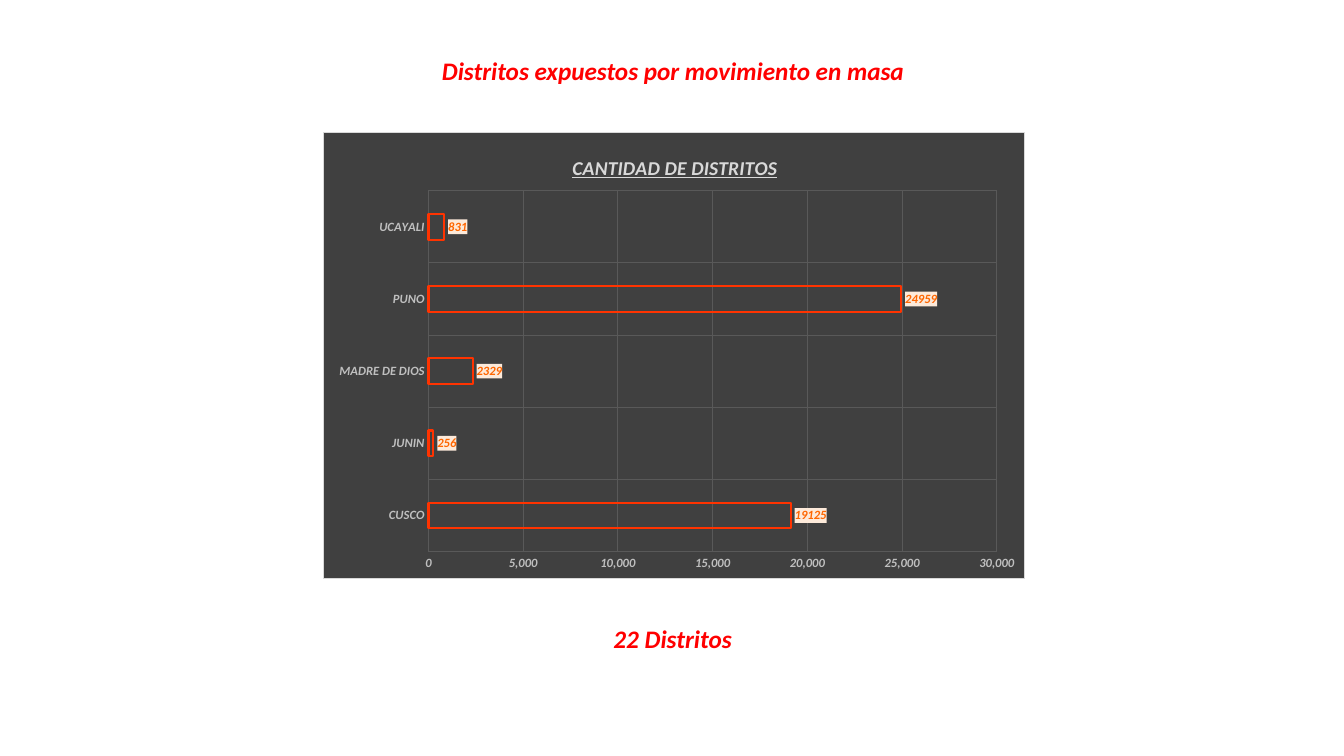
import pptx
import pptx.util
import pptx.chart.data
import pptx.dml.color
import pptx.enum.chart
import pptx.enum.text
import pptx.oxml
import pptx.oxml.ns

Pt = pptx.util.Pt
enum = pptx.enum.chart
hues = {"red": "FF0000", "dark": "404040", "edge": "D9D9D9", "grid": "595959",
        "tick": "BFBFBF", "bar": "FF3300", "value": "FF6600", "tag": "FDEADA"}
space = pptx.oxml.ns.nsdecls("c", "a")


def style(font, size, hue, **more):
    form = {"name": "Calibri", "size": Pt(size), "bold": True, "italic": True, **more}
    for key, value in form.items():
        setattr(font, key, value)
    font.color.rgb = pptx.dml.color.RGBColor.from_string(hues[hue])


def place(node, **spots):
    layout = node.find(pptx.oxml.ns.qn("c:layout"))
    if layout is not None:
        node.remove(layout)
    marks = "".join(f'<c:{key} val="{value}"/>' for key, value in spots.items())
    layout = pptx.oxml.parse_xml(
        f"<c:layout {space}><c:manualLayout>{marks}</c:manualLayout></c:layout>")
    # A title keeps its text before the layout
    node.insert(1 if node.tag.endswith("}title") else 0, layout)


deck = pptx.Presentation()
deck.slide_width, deck.slide_height = Pt(960), Pt(540)
slide = deck.slides.add_slide(deck.slide_layouts[5])

# Heading and total
head = slide.shapes.title
head.left, head.top, head.width, head.height = Pt(306.5), Pt(36), Pt(348.5), Pt(29)
total = slide.shapes.add_textbox(Pt(420.5), Pt(441.5), Pt(120), Pt(29))
for box, text, wrap in ((head, "Distritos expuestos por movimiento en masa", False),
                        (total, "22 Distritos", True)):
    frame = box.text_frame
    frame.text = text
    frame.word_wrap = wrap
    frame.auto_size = pptx.enum.text.MSO_AUTO_SIZE.SHAPE_TO_FIT_TEXT
    frame.vertical_anchor = pptx.enum.text.MSO_ANCHOR.TOP
    frame.paragraphs[0].alignment = pptx.enum.text.PP_ALIGN.CENTER
    style(frame.paragraphs[0].runs[0].font, 18, "red")

# Bar chart
data = pptx.chart.data.CategoryChartData()
data.categories = ["CUSCO", "JUNIN", "MADRE DE DIOS", "PUNO", "UCAYALI"]
data.add_series("Series 1", [19125, 256, 2329, 24959, 831])
chart = slide.shapes.add_chart(enum.XL_CHART_TYPE.BAR_CLUSTERED, Pt(230.5), Pt(94.5),
                               Pt(502), Pt(319), data).chart
chart.has_legend = False
chart.font.name, chart.font.size = "Calibri", Pt(10)

# Chart title
chart.has_title = True
title = chart.chart_title
title.text_frame.text = "CANTIDAD DE DISTRITOS"
style(title.text_frame.paragraphs[0].runs[0].font, 14, "edge", underline=True)
place(title._element, xMode="edge", yMode="edge", x=0.35, y=0.04)

# Axes
for axis in (chart.category_axis, chart.value_axis):
    axis.major_tick_mark = axis.minor_tick_mark = enum.XL_TICK_MARK.NONE
    axis.has_major_gridlines = True
    grid = axis.major_gridlines.format.line
    grid.width = Pt(0.75)
    grid.color.rgb = pptx.dml.color.RGBColor.from_string(hues["grid"])
    axis.format.line.fill.background()
    style(axis.tick_labels.font, 9, "tick")
axis.minimum_scale, axis.maximum_scale, axis.major_unit = 0, 30000, 5000
axis.tick_labels.number_format = "#,##0"
axis.tick_labels.number_format_is_linked = False

# Hollow bars
plot = chart.plots[0]
plot.gap_width, plot.overlap, plot.vary_by_categories = 182, -50, False
bars = plot.series[0]
bars.format.fill.background()
bars.format.line.width = Pt(1.5)
bars.format.line.color.rgb = pptx.dml.color.RGBColor.from_string(hues["bar"])

# Value labels on a pale ground
tags = bars.data_labels
tags.show_value = True
tags.number_format, tags.number_format_is_linked = "General", False
tags.position = enum.XL_LABEL_POSITION.OUTSIDE_END
style(tags.font, 9, "value")
ground = pptx.oxml.parse_xml(
    f'<c:spPr {space}><a:solidFill><a:srgbClr val="{hues["tag"]}"/></a:solidFill></c:spPr>')
tags._element.find(pptx.oxml.ns.qn("c:txPr")).addprevious(ground)

# Chart ground and plot area
root = chart._chartSpace
place(root.chart.plotArea, layoutTarget="inner", xMode="edge", yMode="edge",
      x=0.15, y=0.13, w=0.81, h=0.81)
panel = pptx.oxml.parse_xml(
    f'<c:spPr {space}><a:solidFill><a:srgbClr val="{hues["dark"]}"/></a:solidFill>'
    f'<a:ln w="{Pt(0.75)}"><a:solidFill><a:srgbClr val="{hues["edge"]}"/>'
    f'</a:solidFill></a:ln></c:spPr>')
root.find(pptx.oxml.ns.qn("c:txPr")).addprevious(panel)

deck.save("out.pptx")
